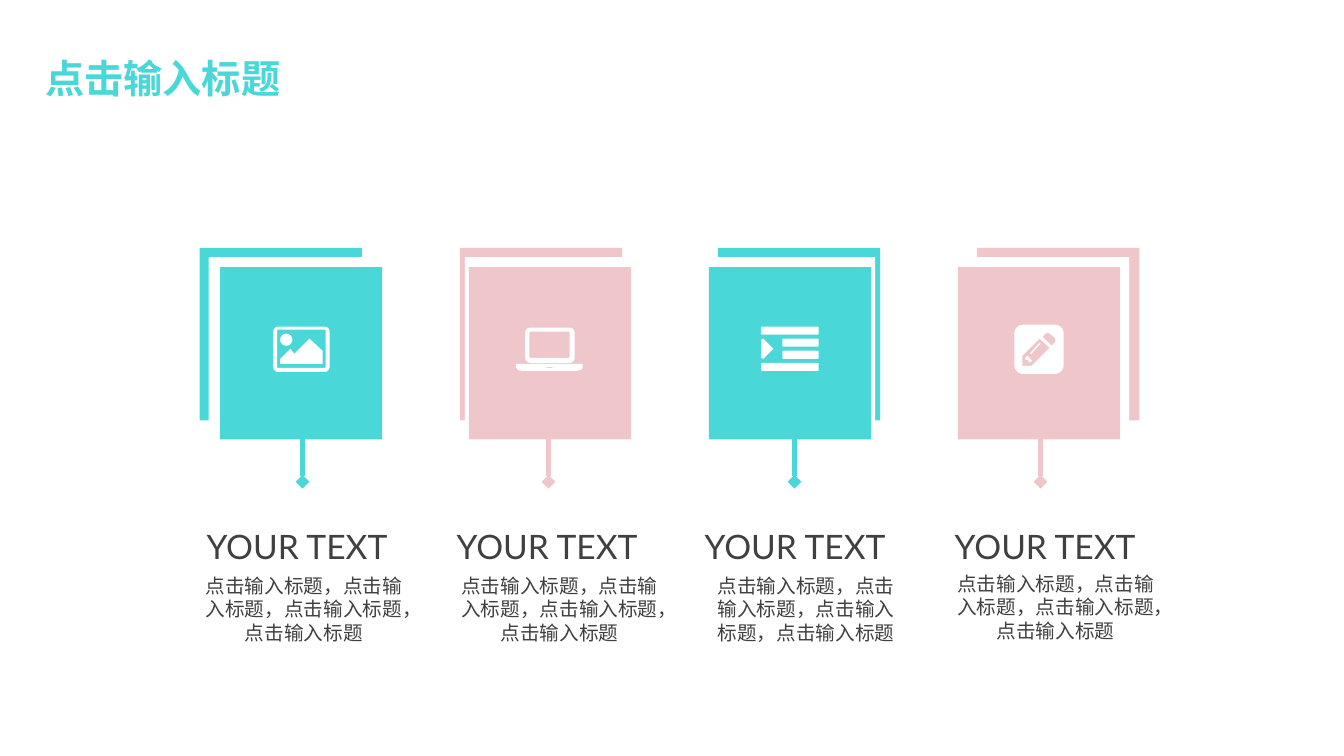
from math import cos, pi, sin

from lxml.etree import SubElement
from pptx import Presentation
from pptx.dml.color import RGBColor
from pptx.enum.shapes import MSO_CONNECTOR as Conn, MSO_SHAPE as Shape
from pptx.enum.text import MSO_ANCHOR as Anchor, MSO_AUTO_SIZE as Auto, PP_ALIGN as Align
from pptx.oxml.ns import qn
from pptx.util import Inches, Pt

TEAL, PINK, WHITE, GREY = "49D8D7", "EFC7CB", "FFFFFF", "404040"
TITLE = "点击输入标题"
BODY = "，".join([TITLE] * 4)
HEAD = {"size": Pt(24), "name": "Lato", "color": GREY}
NOTE = {"size": Pt(14), "name": "Lato", "color": GREY}
TOP = {"size": Pt(28), "name": "Lato", "bold": True, "color": TEAL}
CARD_W, CARD_H = 1.61, 1.71
STEM_X, STEM_GAP = 3, 2.44


def rgb(code):
    return RGBColor.from_string(code)


def paint(shape, color):
    shape.fill.solid()
    shape.fill.fore_color.rgb = rgb(color)
    shape.line.fill.background()
    shape.shadow.inherit = False


def write(frame, text, style, align=Align.LEFT):
    frame.text = text
    para = frame.paragraphs[0]
    para.alignment = align
    for key, value in style.items():
        if key == "color":
            para.font.color.rgb = rgb(value)
        else:
            setattr(para.font, key, value)
    return para


def add_title(slide):
    title = slide.shapes.title
    box = {"left": 0.35, "top": 0.49, "width": 2.56, "height": 0.57}
    for key, value in box.items():
        setattr(title, key, Inches(value))
    frame = title.text_frame
    frame.word_wrap = False
    frame.auto_size = Auto.SHAPE_TO_FIT_TEXT
    frame.vertical_anchor = Anchor.TOP
    write(frame, TITLE, TOP)


def add_card(slide, lefts, color):
    """Stack a back card, a white gap and a front card."""
    for left, top, fill in zip(lefts, (2.46, 2.55, 2.65), (color, WHITE, color)):
        card = slide.shapes.add_shape(
            Shape.RECTANGLE, Inches(left), Inches(top), Inches(CARD_W), Inches(CARD_H))
        paint(card, fill)


def add_stem(slide, x, color):
    stem = slide.shapes.add_connector(
        Conn.STRAIGHT, Inches(x), Inches(4.36), Inches(x), Inches(4.78))
    stem.line.color.rgb = rgb(color)
    stem.line.width = Pt(3.25)
    SubElement(stem.line._get_or_add_ln(), qn("a:tailEnd"), type="diamond")
    SubElement(stem._element.spPr, qn("a:effectLst"))


def add_text(slide, head_x, body):
    group = slide.shapes.add_group_shape()
    head = group.shapes.add_textbox(
        Inches(head_x), Inches(5.17), Inches(2.12), Inches(0.91)).text_frame
    head.word_wrap = True
    head.auto_size = Auto.SHAPE_TO_FIT_TEXT
    write(head, "YOUR TEXT", HEAD)

    left, top, width = body
    note = group.shapes.add_textbox(
        Inches(left), Inches(top), Inches(width), Inches(1.07)).text_frame
    note.word_wrap = True
    for side in ("left", "top", "right", "bottom"):
        setattr(note, f"margin_{side}", 0)
    write(note, BODY, NOTE, Align.CENTER).space_before = Pt(7.5)


def bend(x, y, r, start, sweep, steps):
    """Points along an arc, with angles in quarter turns."""
    turns = [(start + sweep * i / steps) * pi / 2 for i in range(steps + 1)]
    return [(x + r * cos(t), y + r * sin(t)) for t in turns]


def bar(left, top, right, bottom, r=0.01):
    """Outline of a rectangle with round corners."""
    spots = ((right - r, bottom - r), (left + r, bottom - r),
             (left + r, top + r), (right - r, top + r))
    return [p for i, (x, y) in enumerate(spots) for p in bend(x, y, r, i, 1, 6)]


def photo():
    hill = [(3.2, 3.61), (2.78, 3.61), (2.78, 3.56), (2.88, 3.46),
            (2.92, 3.51), (3.07, 3.36), (3.2, 3.48)]
    return [bar(2.71, 3.24, 3.27, 3.69, 0.05), bar(2.75, 3.27, 3.23, 3.65),
            bend(2.84, 3.37, 0.06, 0, 4, 24), hill]


def laptop():
    base = [(5.12, 3.61), (5.78, 3.61), (5.78, 3.65), (5.76, 3.67), (5.72, 3.68),
            (5.18, 3.68), (5.14, 3.67), (5.12, 3.65)]
    return [base, bar(5.21, 3.25, 5.7, 3.6, 0.05), bar(5.25, 3.29, 5.65, 3.55),
            bar(5.42, 3.64, 5.48, 3.65, 0)]


def indent():
    wide = [bar(7.55, y, 8.12, y + 0.08) for y in (3.24, 3.6)]
    short = [bar(7.76, y, 8.12, y + 0.08) for y in (3.36, 3.48)]
    arrow = [(7.55, 3.37), (7.57, 3.36), (7.67, 3.46), (7.57, 3.56), (7.55, 3.55)]
    return wide + short + [arrow]


def pencil():
    stick = [(10.41, 3.45), (10.31, 3.36), (10.14, 3.53), (10.14, 3.63), (10.23, 3.63)]
    tip = [(10.24, 3.58), (10.22, 3.59), (10.2, 3.59), (10.2, 3.57),
           (10.17, 3.57), (10.17, 3.55), (10.19, 3.53)]
    shine = [(10.32, 3.41), (10.23, 3.51), (10.22, 3.51), (10.22, 3.5), (10.31, 3.4)]
    cap = [(10.46, 3.4), (10.47, 3.38), (10.46, 3.35), (10.41, 3.31),
           (10.39, 3.3), (10.37, 3.31), (10.34, 3.34), (10.43, 3.43)]
    return [bar(10.06, 3.22, 10.55, 3.71, 0.09), stick, tip, shine, cap]


def add_icon(slide, loops):
    """Draw all outlines as one shape, so inner ones become holes."""
    loops = [[(Inches(x), Inches(y)) for x, y in loop] for loop in loops]
    pen = slide.shapes.build_freeform(*loops[0][0])
    for i, loop in enumerate(loops):
        if i:
            pen.move_to(*loop[0])
        pen.add_line_segments(loop[1:], close=True)
    paint(pen.convert_to_shape(), WHITE)


def main():
    deck = Presentation()
    deck.slide_width, deck.slide_height = Inches(13.33), Inches(7.5)
    slide = deck.slides.add_slide(deck.slide_layouts[5])
    add_title(slide)
    # Colour, card lefts, icon, heading left, body (left, top, width)
    columns = [
        (TEAL, (1.98, 2.07, 2.18), photo, 1.95, (2, 5.69, 2.03)),
        (PINK, (4.56, 4.61, 4.65), laptop, 4.43, (4.56, 5.69, 1.98)),
        (TEAL, (7.12, 7.07, 7.03), indent, 6.89, (7.03, 5.69, 1.93)),
        (PINK, (9.69, 9.59, 9.5), pencil, 9.37, (9.46, 5.67, 2.02)),
    ]
    for i, (color, lefts, icon, head_x, body) in enumerate(columns):
        add_card(slide, lefts, color)
        add_icon(slide, icon())
        add_stem(slide, STEM_X + i * STEM_GAP, color)
        add_text(slide, head_x, body)
    deck.save("out.pptx")


if __name__ == "__main__":
    main()
